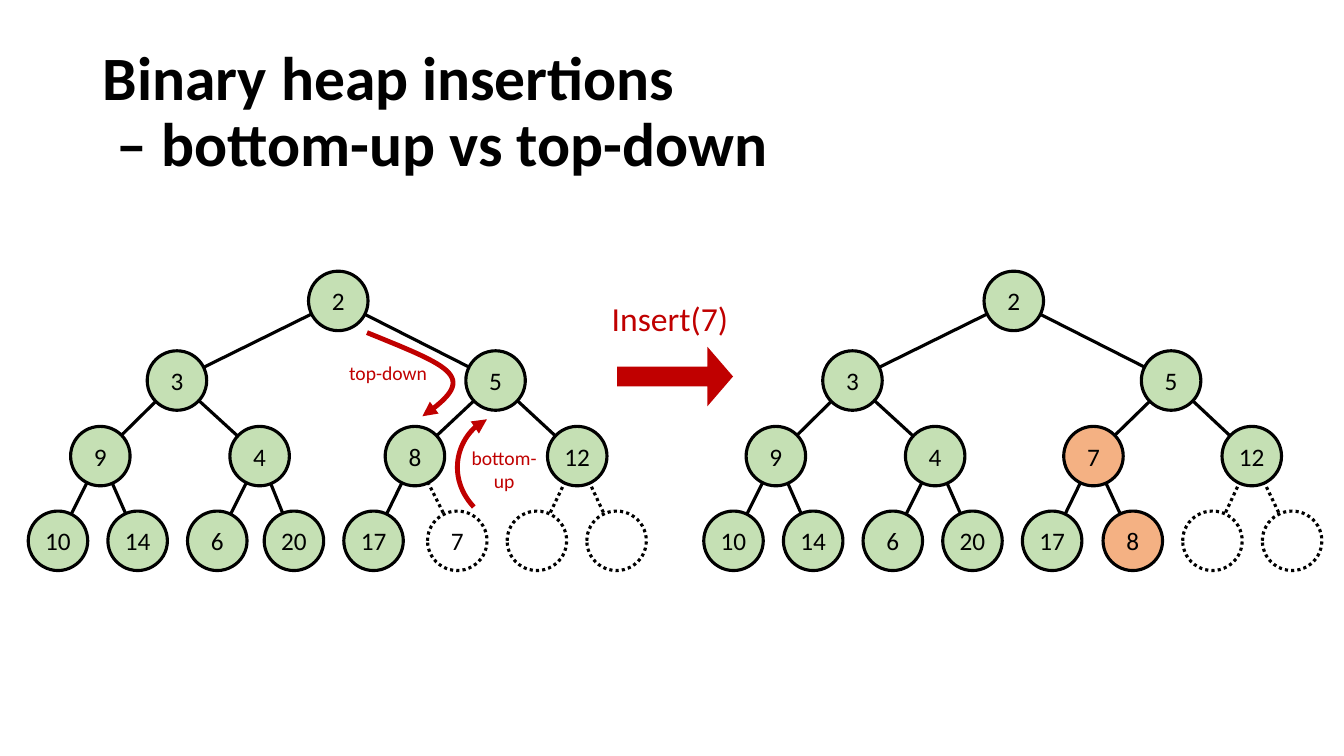
"""Builds a slide comparing bottom-up and top-down insertion into a binary heap."""
from dataclasses import dataclass

from lxml import etree
from pptx import Presentation
from pptx import util as u
from pptx.dml.color import RGBColor
from pptx.enum import dml, shapes, text
from pptx.oxml.ns import qn

BLACK, WHITE, RED, GREEN, ORANGE = "000000", "FFFFFF", "C00000", "C5E0B4", "F4B183"
NODE_SIZE = 0.59
LEVEL_TOPS = (2.69, 3.48, 4.23, 5.07)
Point = tuple[float, float]


@dataclass(frozen=True)
class Node:
    label: str
    left: float
    fill: str = GREEN
    dotted: bool = False


@dataclass(frozen=True)
class Caption:
    words: str
    left: float
    top: float
    width: float
    height: float
    size: float


HEAP_BEFORE = (
    Node("2", 3.06),
    Node("3", 1.46), Node("5", 4.62),
    Node("9", 0.7), Node("4", 2.28), Node("8", 3.82), Node("12", 5.43),
    Node("10", 0.28), Node("14", 1.07), Node("6", 1.86), Node("20", 2.62),
    Node("17", 3.41), Node("7", 4.24, WHITE, True),
    Node("", 5.03, WHITE, True), Node("", 5.82, WHITE, True),
)
HEAP_AFTER = (
    Node("2", 9.76),
    Node("3", 8.16), Node("5", 11.32),
    Node("9", 7.4), Node("4", 8.98), Node("7", 10.55, ORANGE), Node("12", 12.12),
    Node("10", 6.98), Node("14", 7.77), Node("6", 8.56), Node("20", 9.35),
    Node("17", 10.14), Node("8", 10.94, ORANGE),
    Node("", 11.73, WHITE, True), Node("", 12.52, WHITE, True),
)
BOTTOM_UP = ((4.7, 5.03), (4.41, 4.72), (4.54, 4.3), (4.83, 4.16))
TOP_DOWN = ((3.64, 3.3), (4.5, 3.65), (4.76, 3.74), (4.19, 4.13))
CAPTIONS = (
    Caption("Insert(7)", 5.41, 2.91, 2.47, 0.5, 24),
    Caption("bottom-\vup", 4.45, 4.37, 1.1, 0.57, 14),
    Caption("top-down", 3.3, 3.53, 1.1, 0.34, 14),
)


def colour(hex_code: str) -> RGBColor:
    return RGBColor.from_string(hex_code)


def inches(*lengths: float) -> list[u.Length]:
    return [u.Inches(length) for length in lengths]


def style_line(line, hex_code: str, width: float, dotted: bool = False) -> None:
    line.color.rgb = colour(hex_code)
    line.width = u.Pt(width)
    if dotted:
        line.dash_style = dml.MSO_LINE.ROUND_DOT


def write(frame, words: str, size: float, hex_code: str, align, bold: bool = False) -> None:
    frame.text = words
    frame.word_wrap = True
    paragraph = frame.paragraphs[0]
    paragraph.alignment = align
    font = paragraph.font
    font.name, font.size, font.bold = "Calibri", u.Pt(size), bold
    font.color.rgb = colour(hex_code)


def node_top(index: int) -> float:
    return LEVEL_TOPS[(index + 1).bit_length() - 1]


def draw_heap(slide, heap: tuple[Node, ...]) -> None:
    centres = [(node.left + NODE_SIZE / 2, node_top(i) + NODE_SIZE / 2)
               for i, node in enumerate(heap)]
    edges = slide.shapes.add_group_shape().shapes
    for child in range(1, len(heap)):
        edge = edges.add_connector(shapes.MSO_CONNECTOR.STRAIGHT,
                                   *inches(*centres[child], *centres[(child - 1) // 2]))
        style_line(edge.line, BLACK, 2.25, heap[child].dotted)
        etree.SubElement(edge._element.spPr, qn("a:effectLst"))
    circles = slide.shapes.add_group_shape().shapes
    for i, node in enumerate(heap):
        circle = circles.add_shape(shapes.MSO_SHAPE.OVAL,
                                   *inches(node.left, node_top(i), NODE_SIZE, NODE_SIZE))
        circle.shadow.inherit = False
        circle.fill.solid()
        circle.fill.fore_color.rgb = colour(node.fill)
        style_line(circle.line, BLACK, 2.25, node.dotted)
        if node.label:
            frame = circle.text_frame
            frame.margin_left = frame.margin_right = 0
            frame.vertical_anchor = text.MSO_ANCHOR.MIDDLE
            write(frame, node.label, 18, BLACK, text.PP_ALIGN.CENTER)


def bezier_point(curve: tuple[Point, ...], t: float) -> list[u.Length]:
    weights = ((1 - t) ** 3, 3 * t * (1 - t) ** 2, 3 * t ** 2 * (1 - t), t ** 3)
    return inches(*(sum(w * p[axis] for w, p in zip(weights, curve)) for axis in (0, 1)))


def draw_curved_arrow(slide, curve: tuple[Point, ...], steps: int = 30) -> None:
    start, *rest = [bezier_point(curve, step / steps) for step in range(steps + 1)]
    builder = slide.shapes.build_freeform(*start)
    builder.add_line_segments(rest, close=False)
    arrow = builder.convert_to_shape()
    arrow.shadow.inherit = False
    arrow.fill.background()
    style_line(arrow.line, RED, 3.5)
    outline = arrow._element.spPr.find(qn("a:ln"))
    etree.SubElement(outline, qn("a:round"))
    etree.SubElement(outline, qn("a:tailEnd"), type="triangle")


def draw_insert_arrow(slide) -> None:
    arrow = slide.shapes.add_shape(shapes.MSO_SHAPE.RIGHT_ARROW, *inches(6.12, 3.44, 1.15, 0.59))
    arrow.adjustments[0], arrow.adjustments[1] = 0.33, 0.43
    arrow.shadow.inherit = False
    arrow.fill.solid()
    arrow.fill.fore_color.rgb = colour(RED)
    arrow.line.fill.background()


def draw_caption(slide, caption: Caption) -> None:
    box = slide.shapes.add_textbox(
        *inches(caption.left, caption.top, caption.width, caption.height))
    write(box.text_frame, caption.words, caption.size, RED, text.PP_ALIGN.CENTER)


def draw_title(slide) -> None:
    title = slide.shapes.title
    title.left, title.top, title.width, title.height = inches(0.92, 0.4, 12.47, 1.45)
    frame = title.text_frame
    write(frame, "Binary heap insertions\v – bottom-up vs top-down", 44, BLACK,
          text.PP_ALIGN.LEFT, bold=True)
    frame.vertical_anchor = text.MSO_ANCHOR.MIDDLE
    frame.paragraphs[0].line_spacing = 0.9


def main() -> None:
    deck = Presentation()
    deck.slide_width, deck.slide_height = inches(13.33, 7.5)
    slide = deck.slides.add_slide(deck.slide_layouts[5])
    draw_title(slide)
    for heap in (HEAP_BEFORE, HEAP_AFTER):
        draw_heap(slide, heap)
    for curve in (BOTTOM_UP, TOP_DOWN):
        draw_curved_arrow(slide, curve)
    draw_insert_arrow(slide)
    for caption in CAPTIONS:
        draw_caption(slide, caption)
    deck.save("out.pptx")


if __name__ == "__main__":
    main()
